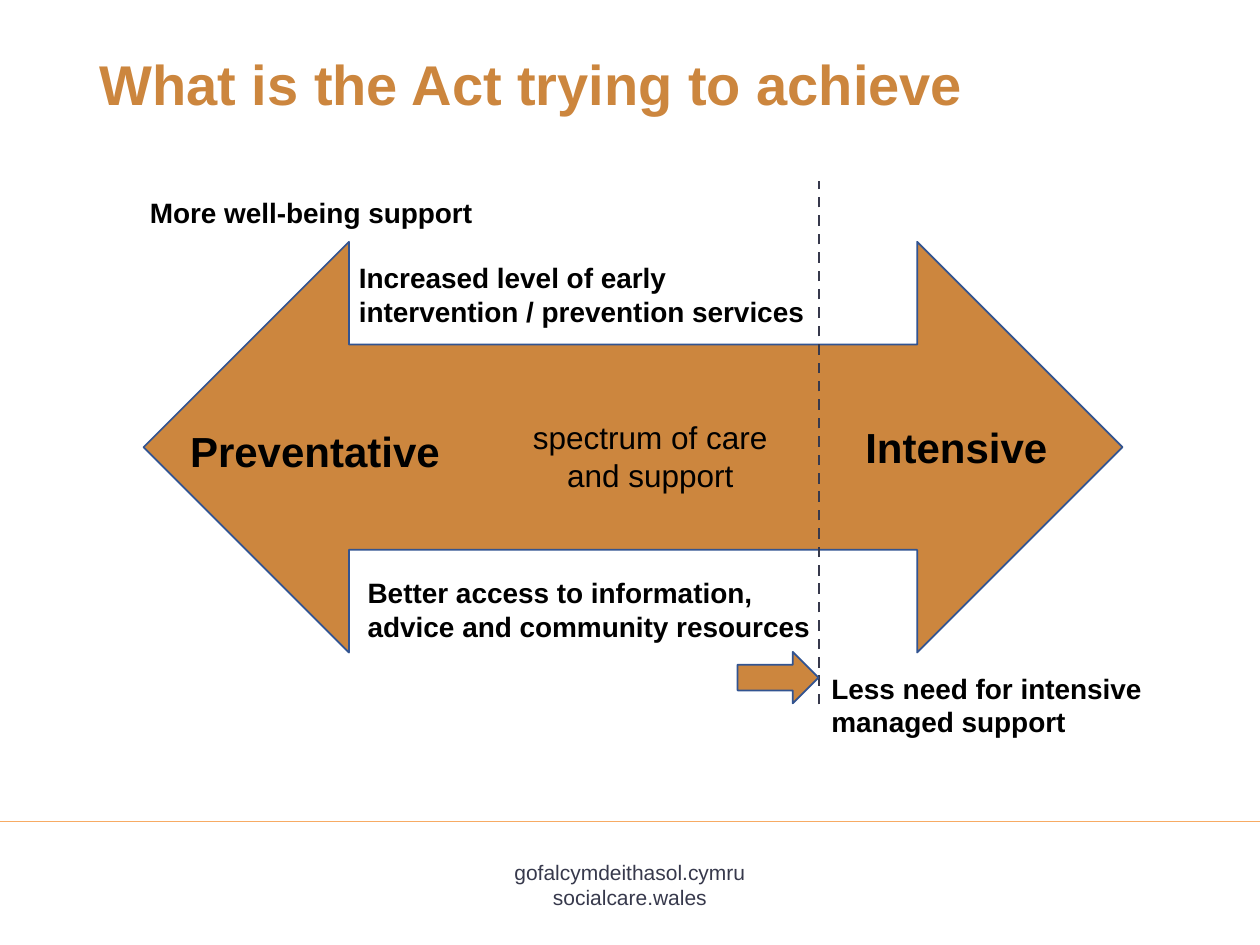
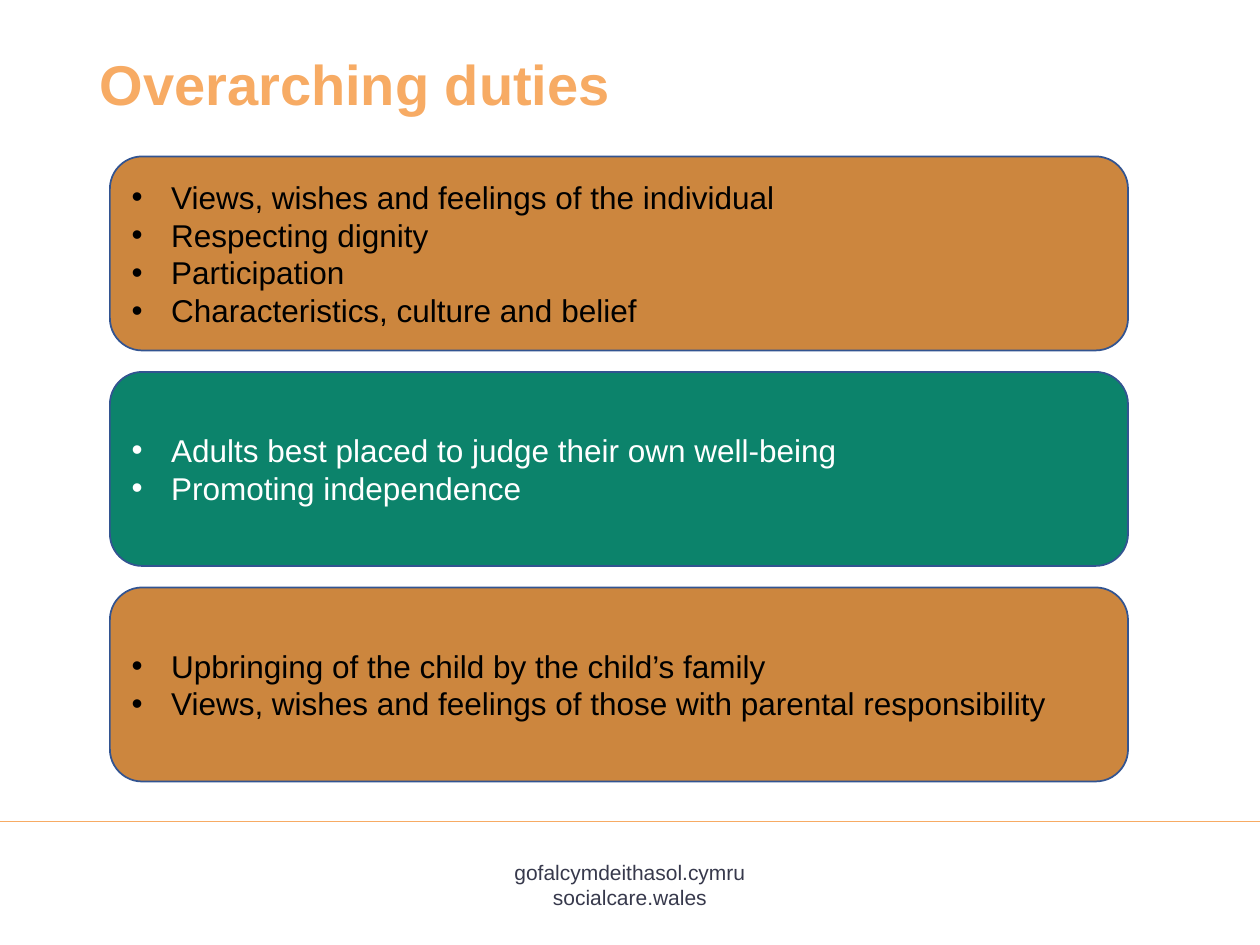
from lxml import etree
from pptx import Presentation
from pptx import util as u
from pptx.dml.color import RGBColor
from pptx.enum import dml, shapes, text
from pptx.oxml.ns import qn

FONT = "Arial"
OCHRE = RGBColor(0xCC, 0x86, 0x3E)
PEACH = RGBColor(0xF7, 0xAB, 0x64)
GREEN = RGBColor(0x0C, 0x83, 0x6B)
OUTLINE = RGBColor(0x32, 0x54, 0x91)
SLATE = RGBColor(0x37, 0x39, 0x4C)
BLACK = RGBColor(0, 0, 0)
WHITE = RGBColor(255, 255, 255)

SLIDE_WIDTH, SLIDE_HEIGHT = 720, 540
LABEL_HEIGHT = 75.6
BULLET_INDENT = 22.5

DUTIES = [
    (OCHRE, BLACK, ["Views, wishes and feelings of the individual",
                    "Respecting dignity",
                    "Participation",
                    "Characteristics, culture and belief"]),
    (GREEN, WHITE, ["Adults best placed to judge their own well-being",
                    "Promoting independence"]),
    (OCHRE, BLACK, ["Upbringing of the child by the child’s family",
                    "Views, wishes and feelings of those with parental responsibility"]),
]


def points(*lengths):
    return [u.Pt(length) for length in lengths]


def write(frame, lines, size, color, bold=False, align=text.PP_ALIGN.LEFT,
          anchor=text.MSO_ANCHOR.MIDDLE):
    frame.word_wrap = True
    frame.auto_size = text.MSO_AUTO_SIZE.NONE
    frame.vertical_anchor = anchor
    frame.text = "\n".join(lines)
    for para in frame.paragraphs:
        para.alignment = align
        for span in para.runs:
            span.font.name = FONT
            span.font.size = u.Pt(size)
            span.font.bold = bold
            span.font.color.rgb = color


def add_label(page, wording, left, top, width, size=16, height=LABEL_HEIGHT, **style):
    box = page.shapes.add_textbox(*points(left, top, width, height))
    write(box.text_frame, wording.split("\n"), size, style.pop("color", BLACK), **style)


def add_block(page, kind, left, top, width, height, fill):
    block = page.shapes.add_shape(kind, *points(left, top, width, height))
    block.shadow.inherit = False
    block.fill.solid()
    block.fill.fore_color.rgb = fill
    block.line.color.rgb = OUTLINE
    block.line.width = u.Pt(1)
    return block


def add_rule(page, start, end, color, width, dash=None):
    rule = page.shapes.add_connector(shapes.MSO_CONNECTOR.STRAIGHT, *points(*start, *end))
    rule.line.color.rgb = color
    rule.line.width = u.Pt(width)
    if dash:
        rule.line.dash_style = dash
    etree.SubElement(rule._element.spPr, qn("a:effectLst"))


def add_bullets(paragraphs):
    for para in paragraphs:
        properties = para._p.get_or_add_pPr()
        properties.set("marL", str(u.Pt(BULLET_INDENT)))
        properties.set("indent", str(-u.Pt(BULLET_INDENT)))
        etree.SubElement(properties, qn("a:buFont"), typeface=FONT)
        etree.SubElement(properties, qn("a:buChar"), char="•")


def add_page(deck, title, title_width, title_color):
    """Start a slide with its title, footer rule and web addresses."""
    page = deck.slides.add_slide(deck.slide_layouts[5])
    add_label(page, "gofalcymdeithasol.cymru\nsocialcare.wales", 278.6, 487.4, 162.8,
              size=12, height=33, color=SLATE, align=text.PP_ALIGN.CENTER,
              anchor=text.MSO_ANCHOR.TOP)
    add_rule(page, (0, 469.4), (SLIDE_WIDTH, 469.4), PEACH, 1)
    heading = page.shapes.title
    heading.left, heading.top, heading.width, heading.height = points(
        49.7, 28.8, title_width, 81.4)
    write(heading.text_frame, [title], 32, title_color, bold=True,
          anchor=text.MSO_ANCHOR.TOP)
    heading.text_frame.paragraphs[0].line_spacing = 0.9
    return page


def build_spectrum(deck):
    page = add_page(deck, "What is the Act trying to achieve", 538.6, OCHRE)
    add_block(page, shapes.MSO_SHAPE.LEFT_RIGHT_ARROW, 82.1, 138.2, 559.4, 234.7, OCHRE)
    add_label(page, "spectrum of care and support", 290.2, 222.5, 162.7, size=18,
              align=text.PP_ALIGN.CENTER)
    add_label(page, "Preventative", 101.5, 219.6, 209.5, size=24, bold=True)
    add_label(page, "Intensive", 487.4, 217.4, 120, size=24, bold=True)

    threshold = 468
    add_rule(page, (threshold, 402.5), (threshold, 103.7), SLATE, 1.5,
             dml.MSO_LINE.DASH)
    add_block(page, shapes.MSO_SHAPE.RIGHT_ARROW, 421.5, 372.5, 46.2, 29.4, OCHRE)
    for wording, left, top, width in (
            ("More well-being support", 78.5, 83.5, 234),
            ("Increased level of early intervention / prevention services", 198, 130.3, 277.2),
            ("Better access to information, advice and community resources", 203, 310.3, 284.4),
            ("Less need for intensive managed support", threshold, 365, 234)):
        add_label(page, wording, left, top, width, bold=True)


def build_duties(deck):
    page = add_page(deck, "Overarching duties", 357.8, PEACH)
    first_top, pitch = 89.4, 123.15
    for index, (fill, color, duties) in enumerate(DUTIES):
        panel = add_block(page, shapes.MSO_SHAPE.ROUNDED_RECTANGLE,
                          62.8, first_top + index * pitch, 581.8, 110.9, fill)
        write(panel.text_frame, duties, 18, color)
        add_bullets(panel.text_frame.paragraphs)


def main():
    deck = Presentation()
    deck.slide_width, deck.slide_height = points(SLIDE_WIDTH, SLIDE_HEIGHT)
    build_spectrum(deck)
    build_duties(deck)
    deck.save("out.pptx")


if __name__ == "__main__":
    main()
